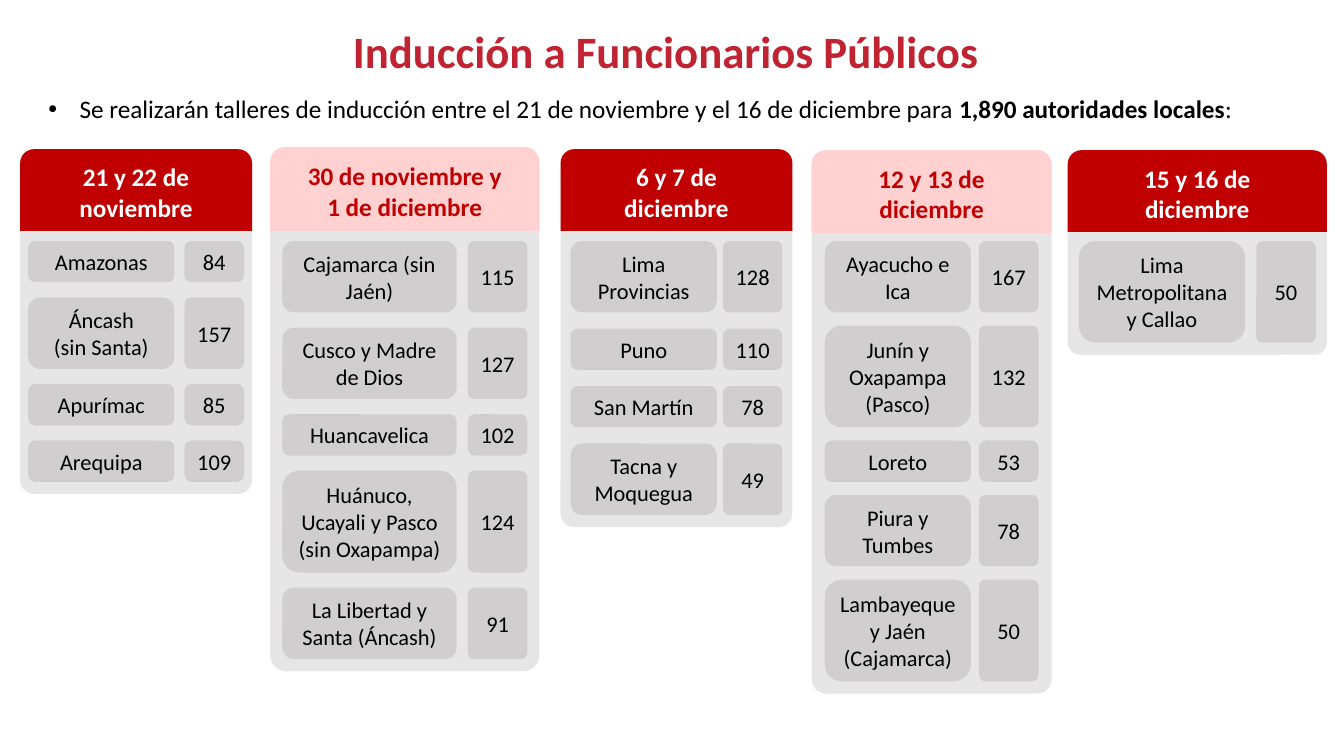
import dataclasses

import lxml.etree
import pptx
import pptx.dml.color
import pptx.enum.shapes
import pptx.enum.text
import pptx.oxml.ns
import pptx.util

Inches = pptx.util.Inches
SHAPE = pptx.enum.shapes.MSO_SHAPE
ALIGN = pptx.enum.text.PP_ALIGN
ANCHOR = pptx.enum.text.MSO_ANCHOR


@dataclasses.dataclass(frozen=True)
class Theme:
    """Colours, font and type sizes of the slide."""
    font: str = "Calibri"
    title: str = "C02433"
    red: str = "C00000"
    pink: str = "FFD1D1"
    panel: str = "E7E6E6"
    cell: str = "D0CECE"
    black: str = "000000"
    white: str = "FFFFFF"
    title_size: int = 32
    head_size: int = 18
    cell_size: int = 16


@dataclasses.dataclass(frozen=True)
class Workshop:
    """One dated column: its box, spacing and (label, lines, count) rows."""
    date: str
    dark: bool
    left: float
    top: float
    width: float
    head_bottom: float
    pad: float
    label_width: float
    gap: float
    rows: tuple


THEME = Theme()
ROWS_TOP = 2.39
ROW_HEIGHT = 0.41
LINE_HEIGHT = 0.3
COUNT_WIDTH = 0.59
PANEL_PAD = 0.12

WORKSHOPS = (
    Workshop("21 y 22 de noviembre", True, 0.2, 1.48, 2.3, 2.29, 0.08, 1.45, 0.15, (
        ("Amazonas", 1, 84), ("Áncash\n(sin Santa)", 2, 157),
        ("Apurímac", 1, 85), ("Arequipa", 1, 109))),
    Workshop("30 de noviembre y\n1 de diciembre", False, 2.68, 1.46, 2.67, 2.29, 0.12, 1.73, 0.15, (
        ("Cajamarca (sin Jaén)", 2, 115), ("Cusco y Madre de Dios", 2, 127),
        ("Huancavelica", 1, 102),
        ("Huánuco, Ucayali y Pasco (sin Oxapampa)", 3, 124),
        ("La Libertad y Santa (Áncash)", 2, 91))),
    Workshop("6 y 7 de diciembre", True, 5.56, 1.48, 2.3, 2.29, 0.1, 1.45, 0.16, (
        ("Lima Provincias", 2, 128), ("Puno", 1, 110),
        ("San Martín", 1, 78), ("Tacna y Moquegua", 2, 49))),
    Workshop("12 y 13 de diciembre", False, 8.05, 1.49, 2.38, 2.31, 0.13, 1.45, 0.13, (
        ("Ayacucho e Ica", 2, 167), ("Junín y Oxapampa (Pasco)", 3, 132),
        ("Loreto", 1, 53), ("Piura y Tumbes", 2, 78),
        ("Lambayeque y Jaén (Cajamarca)", 3, 50))),
    Workshop("15 y 16 de diciembre", True, 10.59, 1.49, 2.57, 2.3, 0.11, 1.65, 0.15, (
        ("Lima Metropolitana y Callao", 3, 50),)),
)


def format_runs(p, size, color, bold=False):
    """Apply the theme font to every run of a paragraph."""
    for r in p.runs:
        r.font.name = THEME.font
        r.font.size = pptx.util.Pt(size)
        r.font.bold = bold
        r.font.color.rgb = pptx.dml.color.RGBColor.from_string(color)


def add_block(s, kind, box, fill, adjust=None):
    """Add a filled shape without outline or shadow."""
    sp = s.shapes.add_shape(kind, *map(Inches, box))
    sp.shadow.inherit = False
    sp.fill.solid()
    sp.fill.fore_color.rgb = pptx.dml.color.RGBColor.from_string(fill)
    sp.line.fill.background()
    if adjust is not None:
        sp.adjustments[0] = adjust
    return sp


def write_centred(sp, text, size, color, margin, bold=False):
    """Write wrapped text in the middle of a shape."""
    tf = sp.text_frame
    tf.word_wrap = True
    tf.vertical_anchor = ANCHOR.MIDDLE
    tf.margin_left = tf.margin_right = Inches(margin)
    tf.margin_top = tf.margin_bottom = Inches(0.03)
    p = tf.paragraphs[0]
    p.text = text
    p.alignment = ALIGN.CENTER
    format_runs(p, size, color, bold)


def place(sp, box):
    """Move a placeholder to a box and fix its text frame."""
    sp.left, sp.top, sp.width, sp.height = map(Inches, box)
    tf = sp.text_frame
    tf.word_wrap = True
    tf.auto_size = pptx.enum.text.MSO_AUTO_SIZE.NONE
    return tf


def add_title(s, box):
    """Fill the title placeholder."""
    tf = place(s.shapes.title, box)
    tf.vertical_anchor = ANCHOR.MIDDLE
    tf.text = "Inducción a Funcionarios Públicos"
    p = tf.paragraphs[0]
    p.alignment = ALIGN.CENTER
    p.line_spacing = 0.8
    format_runs(p, THEME.title_size, THEME.title, True)


def add_intro(s, box):
    """Fill the body placeholder with the bulleted introduction."""
    tf = place(s.placeholders[1], box)
    tf.vertical_anchor = ANCHOR.TOP
    p = tf.paragraphs[0]
    p.text = "Se realizarán talleres de inducción entre el 21 de noviembre y el 16 de diciembre para "
    p.add_run().text = "1,890 autoridades locales"
    p.add_run().text = ":"
    p.space_before = pptx.util.Pt(0)
    pPr = p._p.get_or_add_pPr()
    pPr.set("marL", str(Inches(0.31)))
    pPr.set("indent", str(-Inches(0.31)))
    bullet_font = lxml.etree.SubElement(pPr, pptx.oxml.ns.qn("a:buFont"))
    bullet_font.set("typeface", "Arial")
    bullet = lxml.etree.SubElement(pPr, pptx.oxml.ns.qn("a:buChar"))
    bullet.set("char", "•")
    format_runs(p, THEME.head_size, THEME.black)
    p.runs[1].font.bold = True


def add_workshop(s, w):
    """Draw a dated column with its panel, header and rows."""
    heights = [ROW_HEIGHT + LINE_HEIGHT * (lines - 1) for _, lines, _ in w.rows]
    bottom = ROWS_TOP + sum(heights) + w.gap * (len(heights) - 1) + PANEL_PAD
    add_block(s, SHAPE.ROUNDED_RECTANGLE,
              (w.left, w.top, w.width, bottom - w.top), THEME.panel, 0.06)
    fill, color = (THEME.red, THEME.white) if w.dark else (THEME.pink, THEME.red)
    head = add_block(s, SHAPE.ROUND_2_SAME_RECTANGLE,
                     (w.left, w.top, w.width, w.head_bottom - w.top), fill, 0.17)
    write_centred(head, w.date, THEME.head_size, color, 0.25, True)
    label_left = w.left + w.pad
    count_left = w.left + w.width - w.pad - COUNT_WIDTH
    top = ROWS_TOP
    for (label, lines, count), height in zip(w.rows, heights):
        sp = add_block(s, SHAPE.ROUNDED_RECTANGLE,
                       (label_left, top, w.label_width, height), THEME.cell)
        write_centred(sp, label, THEME.cell_size, THEME.black, 0.1)
        sp = add_block(s, SHAPE.ROUNDED_RECTANGLE,
                       (count_left, top, COUNT_WIDTH, height), THEME.cell,
                       0.11 if lines > 1 else None)
        write_centred(sp, str(count), THEME.cell_size, THEME.black, 0.05)
        top += height + w.gap


def main():
    """Build and save the slide."""
    prs = pptx.Presentation()
    prs.slide_width, prs.slide_height = Inches(13.33), Inches(7.5)
    s = prs.slides.add_slide(prs.slide_layouts[1])
    add_title(s, (2.21, 0.27, 8.79, 0.57))
    add_intro(s, (0.38, 0.88, 12.33, 0.4))
    for w in WORKSHOPS:
        add_workshop(s, w)
    prs.save("out.pptx")


if __name__ == "__main__":
    main()
